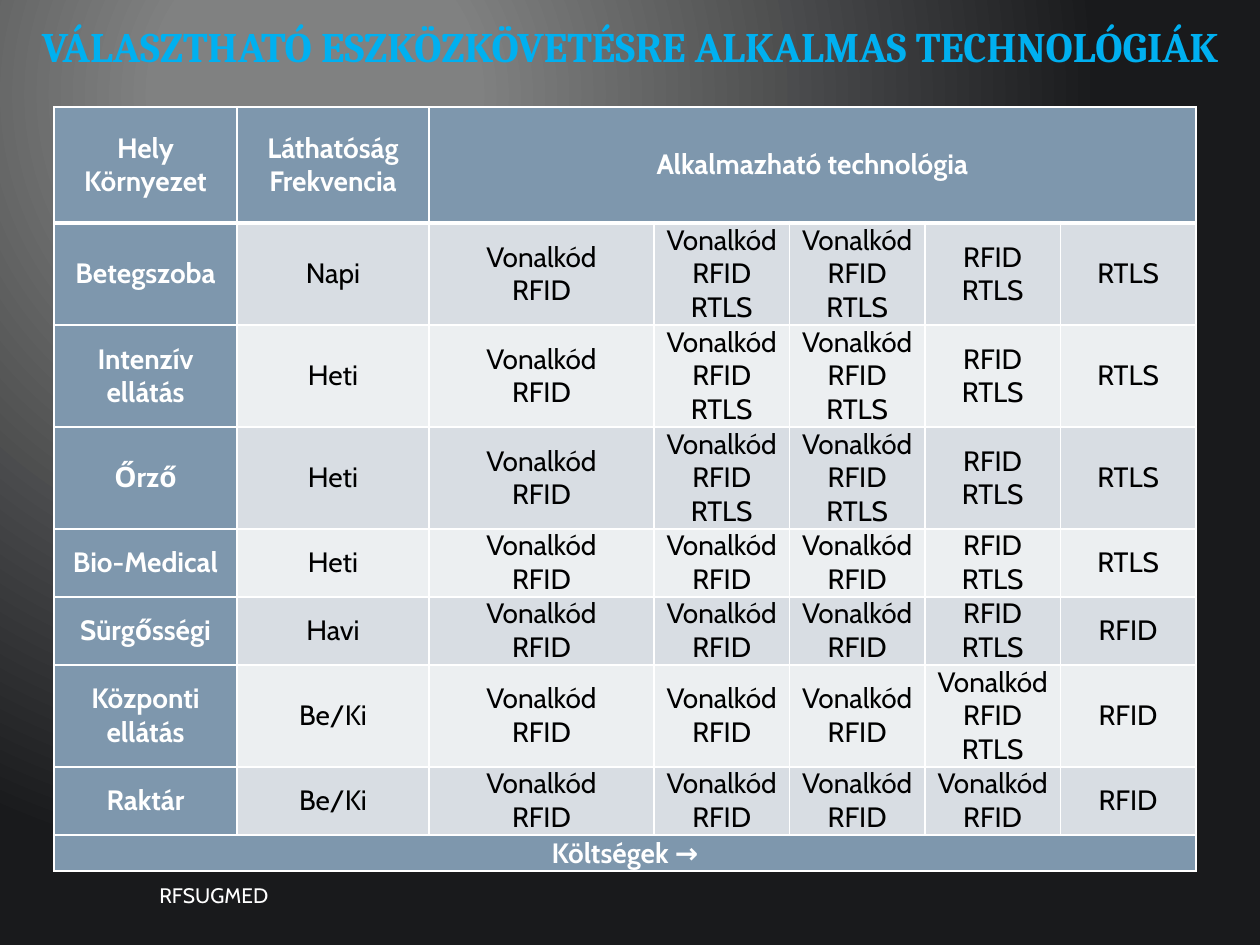
from lxml import etree
from pptx import Presentation, util as u
from pptx.dml.color import RGBColor
from pptx.enum import text
from pptx.oxml import parse_xml
from pptx.oxml.ns import nsdecls, qn

TITLE = "VÁLASZTHATÓ ESZKÖZKÖVETÉSRE ALKALMAS TECHNOLÓGIÁK"
FOOTER = "RFSUGMED"
BR, RT, BRT = "Vonalkód\nRFID", "RFID\nRTLS", "Vonalkód\nRFID\nRTLS"
ROWS = [
    ["Hely\nKörnyezet", "Láthatóság\nFrekvencia", "Alkalmazható technológia"],
    ["Betegszoba", "Napi", BR, BRT, BRT, RT, "RTLS"],
    ["Intenzív ellátás", "Heti", BR, BRT, BRT, RT, "RTLS"],
    ["Őrző", "Heti", BR, BRT, BRT, RT, "RTLS"],
    ["Bio-Medical", "Heti", BR, BR, BR, RT, "RTLS"],
    ["Sürgősségi", "Havi", BR, BR, BR, RT, "RFID"],
    ["Központi ellátás", "Be/Ki", BR, BR, BR, BRT, "RFID"],
    ["Raktár", "Be/Ki", BR, BR, BR, BR, "RFID"],
    ["Költségek →"],
]
COL_W = [183, 192, 225] + [135.5] * 4
ROW_H = [116, 102, 102, 102, 68, 68, 102, 68, 36]
LAST = len(ROWS) - 1
HEAD, BANDS = "7E97AD", ["ECEFF1", "D8DDE3"]


def px(n):
    return u.Emu(int(n * 914400 / 126))


def rgb(h):
    return RGBColor.from_string(h)


def write(p, words, size, font, color, bold=False, align=None):
    p.text = words
    p.alignment = align
    for r in p.runs:
        r.font.size, r.font.name, r.font.bold = u.Pt(size), font, bold
        r.font.color.rgb = rgb(color)


def border(cell, row):
    widths = {"L": 1, "R": 1, "T": 3 if row == 1 else 1, "B": 3 if row == 0 else 1}
    tcPr = cell._tc.get_or_add_tcPr()
    for i, (side, w) in enumerate(widths.items()):
        tcPr.insert(i, parse_xml(
            f'<a:ln{side} {nsdecls("a")} w="{w * 12700}"><a:solidFill>'
            f'<a:srgbClr val="FFFFFF"/></a:solidFill></a:ln{side}>'))


prs = Presentation()
prs.slide_width, prs.slide_height = px(1260), px(945)
s = prs.slides.add_slide(prs.slide_layouts[5])

fill = s.background.fill
fill.gradient()
for stop, (pos, color) in zip(fill.gradient_stops, [(0.2, "808181"), (1, "191A1C")]):
    stop.position, stop.color.rgb = pos, rgb(color)
grad = s.element.find(".//" + qn("a:gradFill"))
grad.remove(grad.find(qn("a:lin")))
path = etree.Element(qn("a:path"), path="circle")
etree.SubElement(path, qn("a:fillToRect"), l="50000", t="20000", r="100000", b="100000")
grad.find(qn("a:gsLst")).addnext(path)

title = s.shapes.title
title.left, title.top, title.width, title.height = px(0), px(16), px(1260), px(60)
tf = title.text_frame
tf.vertical_anchor = text.MSO_ANCHOR.MIDDLE
tf.auto_size = text.MSO_AUTO_SIZE.NONE
write(tf.paragraphs[0], TITLE, 24, "Cambria", "00B0F0", True, text.PP_ALIGN.CENTER)

tf = s.shapes.add_textbox(px(147), px(876), px(703), px(50)).text_frame
tf.word_wrap = True
write(tf.paragraphs[0], FOOTER, 12, "Cabin", "FFFFFF")

table = s.shapes.add_table(len(ROWS), len(COL_W), px(54), px(107),
                           px(sum(COL_W)), px(sum(ROW_H))).table
for col, w in zip(table.columns, COL_W):
    col.width = px(w)
for row, h in zip(table.rows, ROW_H):
    row.height = px(h)
table.cell(0, 2).merge(table.cell(0, 6))
table.cell(LAST, 0).merge(table.cell(LAST, 6))

for i, words in enumerate(ROWS):
    for j in range(len(COL_W)):
        cell = table.cell(i, j)
        head = i in (0, LAST) or j == 0
        cell.fill.solid()
        cell.fill.fore_color.rgb = rgb(HEAD if head else BANDS[i % 2])
        cell.margin_left = cell.margin_right = px(5)
        cell.margin_top = cell.margin_bottom = 0
        cell.vertical_anchor = text.MSO_ANCHOR.BOTTOM if i == LAST else text.MSO_ANCHOR.MIDDLE
        border(cell, i)
        if j < len(words):
            write(cell.text_frame.paragraphs[0], words[j], 16, "Cabin",
                  "FFFFFF" if head else "000000", head, text.PP_ALIGN.CENTER)

prs.save("out.pptx")
